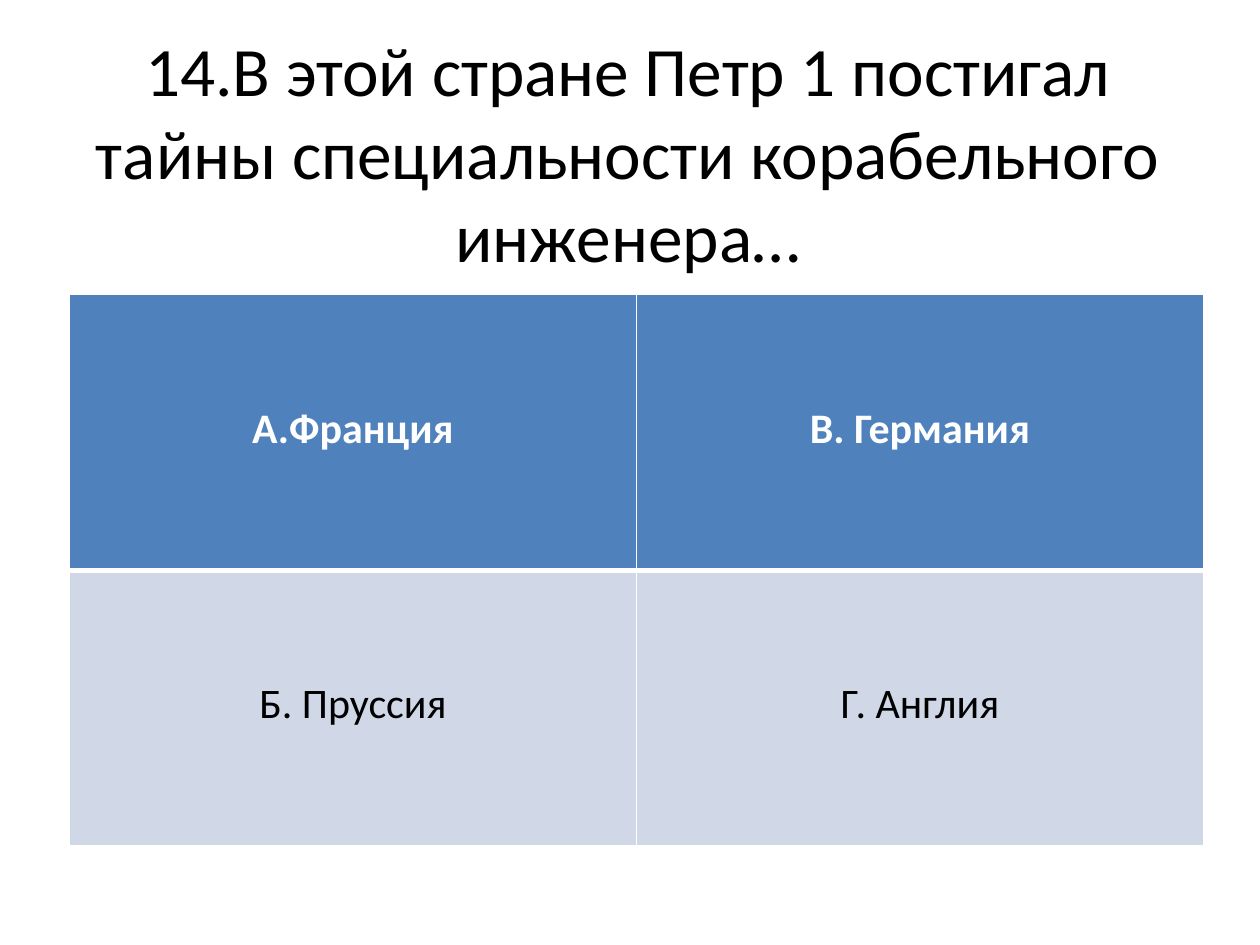
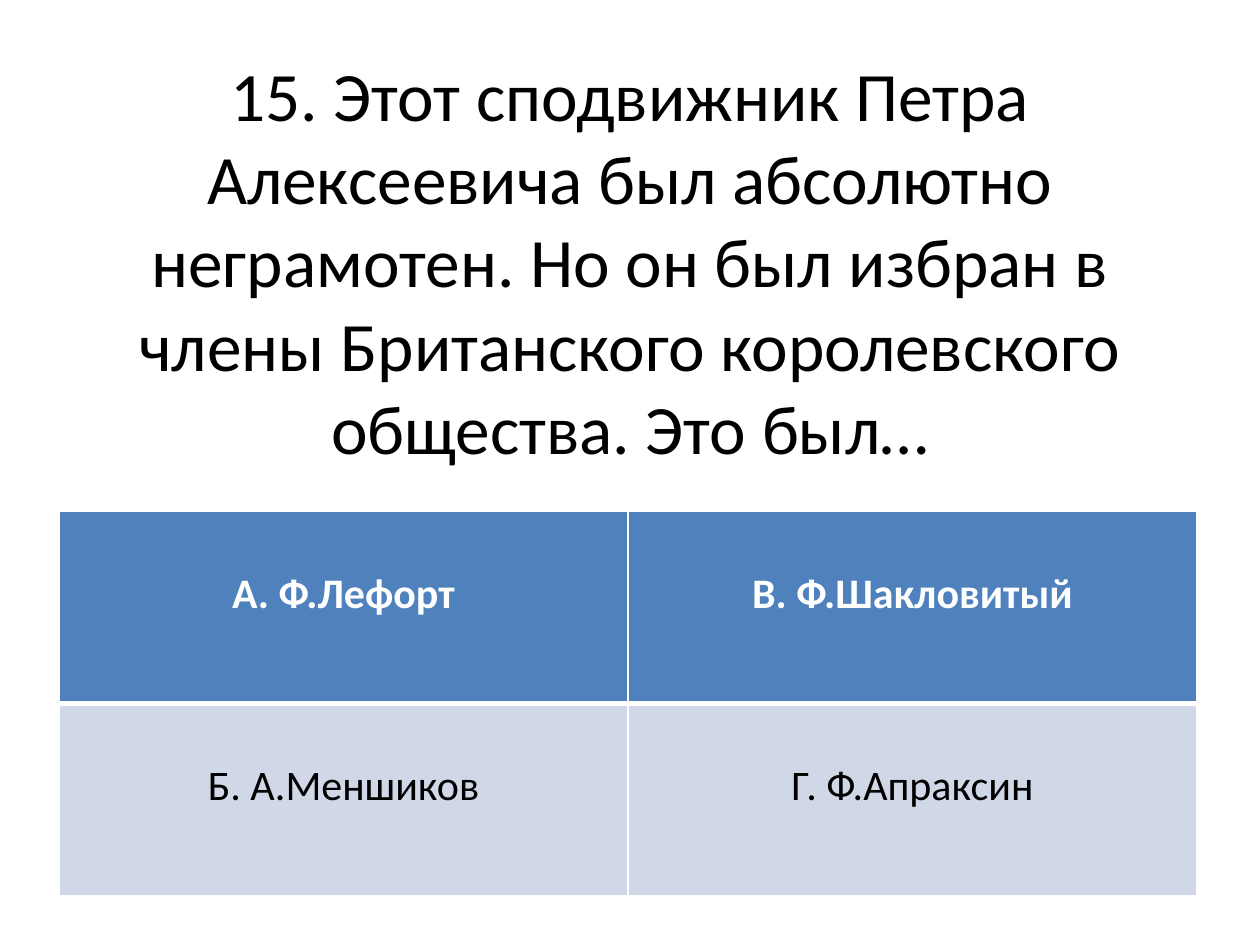
import lxml.etree
import pptx
import pptx.dml.color
import pptx.enum.text
import pptx.oxml.ns
import pptx.util

Cm, Pt = pptx.util.Cm, pptx.util.Pt
RGBColor = pptx.dml.color.RGBColor

FONT = "Calibri"
TITLE_SIZE = Pt(39.6)
ANSWER_SIZE = Pt(24)
BLACK = RGBColor(0x00, 0x00, 0x00)
WHITE = RGBColor(0xFF, 0xFF, 0xFF)
BLUE = RGBColor(0x4F, 0x81, 0xBD)
PALE_BLUE = RGBColor(0xD0, 0xD8, 0xE8)
THIN, THICK = Pt(1), Pt(3)

# Boxes are left, top, width, height in centimetres.
QUESTIONS = [
    {
        "title": "14.В этой стране Петр 1 постигал тайны специальности "
                 "корабельного инженера…",
        "title_box": (1.19, 0.76, 22.94, 4.6),
        "answers": [("А.Франция", "В. Германия"),
                    ("Б. Пруссия", "Г. Англия")],
        "table_box": (1.4, 5.94, 22.86, 11.12),
        "answer_drop": 2.19,
    },
    {
        "title": "15. Этот сподвижник Петра Алексеевича был абсолютно "
                 "неграмотен. Но он был избран в члены Британского "
                 "королевского общества. Это был…",
        "title_box": (1.27, 0.76, 22.86, 8.97),
        "answers": [("А. Ф.Лефорт", "В. Ф.Шакловитый"),
                    ("Б. А.Меншиков", "Г. Ф.Апраксин")],
        "table_box": (1.19, 10.31, 22.94, 7.74),
        "answer_drop": 1.16,
    },
]


def write_centred(frame, text, size, color, bold=False):
    frame.text = text
    para = frame.paragraphs[0]
    para.alignment = pptx.enum.text.PP_ALIGN.CENTER
    font = para.runs[0].font
    font.name, font.size, font.bold = FONT, size, bold
    font.color.rgb = color


def add_title(page, text, box):
    frame = page.shapes.add_textbox(*map(Cm, box)).text_frame
    frame.word_wrap = True
    frame.vertical_anchor = pptx.enum.text.MSO_ANCHOR.MIDDLE
    write_centred(frame, text, TITLE_SIZE, BLACK)


def set_borders(cell, **widths):
    """Draw white cell borders; sides are given in schema order: L, R, T, B."""
    properties = cell._tc.get_or_add_tcPr()
    for index, (side, width) in enumerate(widths.items()):
        line = lxml.etree.Element(pptx.oxml.ns.qn(f"a:ln{side}"), w=str(width))
        fill = lxml.etree.SubElement(line, pptx.oxml.ns.qn("a:solidFill"))
        lxml.etree.SubElement(fill, pptx.oxml.ns.qn("a:srgbClr"), val=str(WHITE))
        properties.insert(index, line)


def add_answers(page, answers, box, drop):
    """Add the answer grid; drop is the space above each answer."""
    rows, columns = len(answers), len(answers[0])
    left, top, width, height = box
    table = page.shapes.add_table(rows, columns, *map(Cm, box)).table
    for column in table.columns:
        column.width = Cm(width / columns)
    for row in table.rows:
        row.height = Cm(height / rows)
    for r, names in enumerate(answers):
        is_header = r == 0
        for c, name in enumerate(names):
            cell = table.cell(r, c)
            cell.margin_top = Cm(drop)
            cell.fill.solid()
            cell.fill.fore_color.rgb = BLUE if is_header else PALE_BLUE
            set_borders(cell, L=THIN, R=THIN,
                        T=THICK if r == 1 else THIN,
                        B=THICK if is_header else THIN)
            write_centred(cell.text_frame, name, ANSWER_SIZE,
                          WHITE if is_header else BLACK, is_header)


def main():
    deck = pptx.Presentation()
    deck.slide_width, deck.slide_height = Cm(25.4), Cm(19.05)
    for question in QUESTIONS:
        page = deck.slides.add_slide(deck.slide_layouts[6])
        add_title(page, question["title"], question["title_box"])
        add_answers(page, question["answers"], question["table_box"],
                    question["answer_drop"])
    deck.save("out.pptx")


if __name__ == "__main__":
    main()
